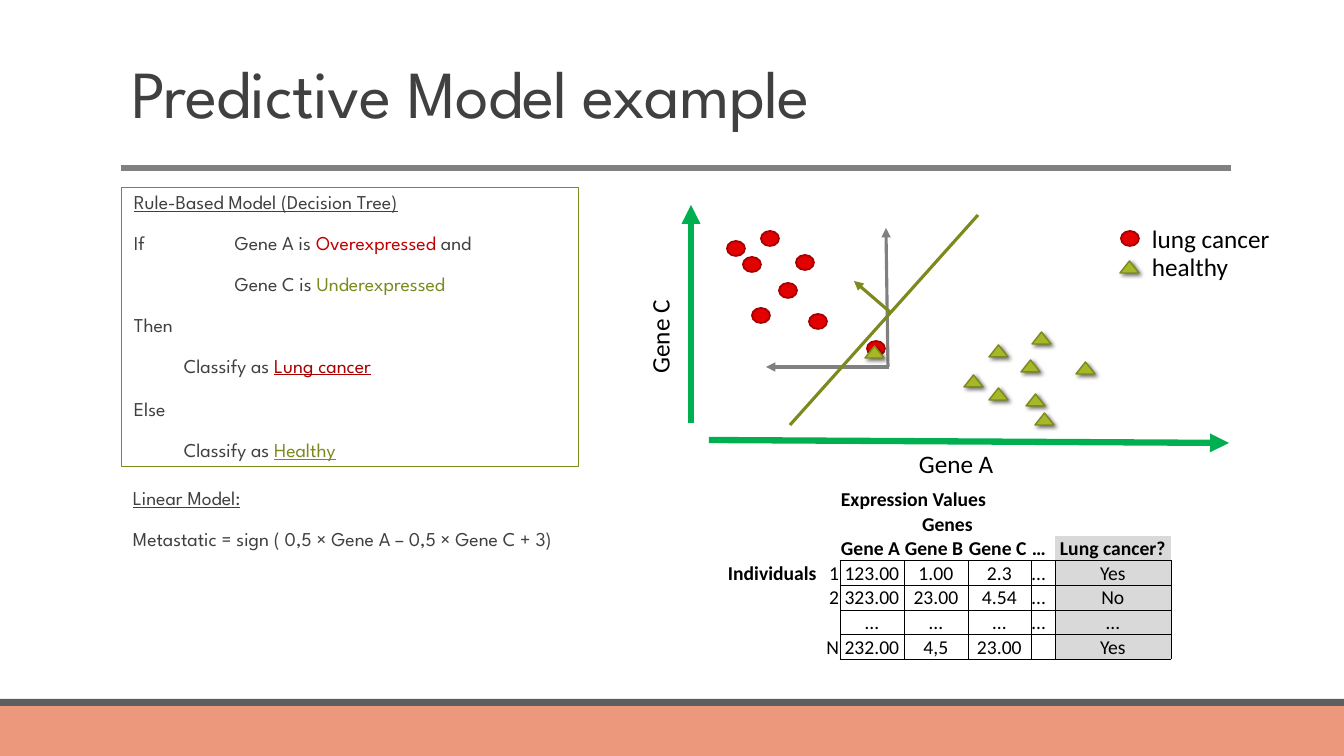
from lxml import etree
from pptx import Presentation, util as u
from pptx.dml.color import RGBColor
from pptx.enum import shapes, text
from pptx.oxml import ns

COLORS = {
    "salmon": "EC987D", "charcoal": "5E5E5E", "gray": "808080", "ink": "404040",
    "black": "000000", "axis": "00B050", "olive": "7D891D", "lime": "A6B727",
    "red": "E20000", "dark red": "A70000", "over": "C00000", "cancer": "AA0000",
    "shade": "D9D9D9",
}
HEADING, BODY = "League Spartan", "Calibri"
TITLE = "Predictive Model example"

# Paragraph: (indent in px, space after in pt, [(words, colour, underlined)])
RULES = [
    (0, 2, [("Rule-Based Model (Decision Tree)", "ink", True)]),
    (0, 2, [("If \tGene A is ", "ink", False), ("Overexpressed ", "over", False),
            ("and", "ink", False)]),
    (0, 2, [("\tGene C is ", "ink", False), ("Underexpressed", "olive", False)]),
    (0, 2, [("Then", "ink", False)]),
    (50, 4, [("Classify as ", "ink", False), ("Lung cancer", "cancer", True)]),
    (0, 2, [("Else", "ink", False)]),
    (50, 4, [("Classify as ", "ink", False), ("Healthy", "olive", True)]),
]
LINEAR = [
    (0, 2, [("Linear Model:", "ink", True)]),
    (0, 2, [("Metastatic = sign ( 0,5 × Gene A – 0,5 × Gene C + 3)", "ink", False)]),
]
TABLE_ROWS = [
    ["", "", "Expression Values", "", "", "", ""],
    ["", "", "Genes", "", "", "", ""],
    ["", "", "Gene A", "Gene B", "Gene C", "…", "Lung cancer?"],
    ["Individuals", "1", "123.00", "1.00", "2.3", "…", "Yes"],
    ["", "2", "323.00", "23.00", "4.54", "…", "No"],
    ["", "", "…", "…", "…", "…", "…"],
    ["", "N", "232.00", "4,5", "23.00", "", "Yes"],
]
COLUMN_WIDTHS = [95, 18, 64, 64, 63, 24, 116]
ROW_HEIGHT = 24
HEADER_ROW, FIRST_GENE, ELLIPSIS, OUTCOME = 2, 2, 5, 6

# Start, end, colour, width in pt, arrowhead
RULE_LINE = ((121, 168), (1231, 168), "gray", 4.25, False)
AXES = [
    ((691, 423), (691, 205), "axis", 4.5, True),
    ((709, 440), (1229, 443), "axis", 4.5, True),
]
BOUNDARIES = [
    ((888, 367), (886, 228), "gray", 2.25, True),
    ((889, 367), (766, 367), "gray", 2.25, True),
    ((790, 425), (978, 215), "olive", 2.25, False),
    ((890, 312), (854, 281), "olive", 2.25, True),
]
LABELS = [
    ("Gene C", (612, 316, 95, 40), 270, False),
    ("Gene A", (909, 443, 96, 40), 0, False),
    ("lung cancer", (1142, 218, 149, 40), 0, True),
    ("healthy", (1142, 246, 190, 40), 0, True),
]
CANCER_POINTS = [(727, 241), (743, 257), (761, 231), (752, 308), (779, 283),
                 (796, 255), (809, 314), (1121, 231)]
HEALTHY_POINTS = [(989, 388), (1021, 360), (1035, 413), (1026, 394), (989, 345),
                  (1076, 362), (1032, 332), (964, 375), (1120, 261)]
NEW_CANCER, NEW_HEALTHY = (867, 341), (865, 346)


def px(*lengths):
    return [round(length * 914400 / 100.8) for length in lengths]


def color(name):
    return RGBColor.from_string(COLORS[name])


def assign(target, **formats):
    for name, value in formats.items():
        setattr(target, name, value)


def add_xml(parent, tag, **attributes):
    return etree.SubElement(parent, ns.qn(tag), attributes)


def add_span(para, words, size, font, shade, **formats):
    span = para.add_run()
    span.text = words
    assign(span.font, size=u.Pt(size), name=font, **formats)
    span.font.color.rgb = color(shade)
    return span


def add_shape(slide, kind, bounds, fill, line=None, width=0):
    shape = slide.shapes.add_shape(kind, *px(*bounds))
    shape.shadow.inherit = False
    shape.fill.solid()
    shape.fill.fore_color.rgb = color(fill)
    if line:
        shape.line.color.rgb = color(line)
        shape.line.width = u.Pt(width)
    else:
        shape.line.fill.background()
    return shape


def add_line(slide, start, end, shade, width, arrow):
    line = slide.shapes.add_connector(shapes.MSO_CONNECTOR.STRAIGHT, *px(*start, *end))
    line.line.color.rgb = color(shade)
    line.line.width = u.Pt(width)
    if arrow:
        add_xml(line.line._get_or_add_ln(), "a:tailEnd", type="triangle")
    add_xml(line._element.spPr, "a:effectLst")


def add_model(slide, bounds, paragraphs):
    box = slide.shapes.add_textbox(*px(*bounds))
    side, edge = px(12, 5)
    assign(box.text_frame, word_wrap=True, margin_left=side, margin_right=side,
           margin_top=edge, margin_bottom=edge)
    for index, (indent, after, spans) in enumerate(paragraphs):
        para = box.text_frame.add_paragraph() if index else box.text_frame.paragraphs[0]
        assign(para, line_spacing=0.9, space_before=u.Pt(12), space_after=u.Pt(after))
        properties = para._p.get_or_add_pPr()
        properties.set("marL", str(px(indent)[0]))
        stops = add_xml(properties, "a:tabLst")
        add_xml(stops, "a:tab", pos=str(u.Inches(1)), algn="l")
        for words, shade, underline in spans:
            add_span(para, words, 14, HEADING, shade, underline=underline)
    return box


def add_label(slide, words, bounds, rotation, wrap):
    box = slide.shapes.add_textbox(*px(*bounds))
    box.rotation = rotation
    box.text_frame.word_wrap = wrap
    add_span(box.text_frame.paragraphs[0], words, 18, BODY, "black")


def add_cancer(slide, point):
    add_shape(slide, shapes.MSO_SHAPE.OVAL, (*point, 18, 15), "red", "dark red", 1.25)


def add_healthy(slide, point):
    marker = add_shape(slide, shapes.MSO_SHAPE.ISOSCELES_TRIANGLE, (*point, 19, 12),
                       "lime", "olive", 1)
    effects = marker._element.spPr.find(ns.qn("a:effectLst"))
    shadow = add_xml(effects, "a:outerShdw", blurRad=str(u.Pt(3)), dist=str(u.Pt(2)),
                     dir=str(45 * 60000), algn="tl", rotWithShape="0")
    add_xml(add_xml(shadow, "a:srgbClr", val=COLORS["black"]), "a:alpha", val="60000")


def add_borders(cell, sides):
    for side in sides:
        line = add_xml(cell._tc.get_or_add_tcPr(), f"a:ln{side}", w=str(u.Pt(0.5)))
        add_xml(add_xml(line, "a:solidFill"), "a:srgbClr", val=COLORS["black"])


def cell_alignment(row, column):
    if row > HEADER_ROW and column == 1:
        return text.PP_ALIGN.RIGHT
    centred = row == 1 or column == OUTCOME or (
        row > HEADER_ROW and FIRST_GENE <= column < ELLIPSIS)
    return text.PP_ALIGN.CENTER if centred else text.PP_ALIGN.LEFT


def format_cell(cell, words, row, column):
    in_grid = column >= FIRST_GENE
    pad = px(1)[0]
    assign(cell, margin_left=pad, margin_right=pad, margin_top=pad, margin_bottom=0,
           vertical_anchor=text.MSO_ANCHOR.BOTTOM)
    if in_grid and row >= HEADER_ROW:
        add_borders(cell, "LRTB" if row > HEADER_ROW else "B")
    elif column == FIRST_GENE - 1 and row > HEADER_ROW:
        add_borders(cell, "R")
    if column == OUTCOME and row >= HEADER_ROW:
        cell.fill.solid()
        cell.fill.fore_color.rgb = color("shade")
    else:
        cell.fill.background()
    para = cell.text_frame.paragraphs[0]
    para.alignment = cell_alignment(row, column)
    if words:
        add_span(para, words, 14, BODY, "black", bold=row <= HEADER_ROW or column == 0)
    else:
        add_xml(para._p, "a:endParaRPr", sz="1400")


def add_expression_table(slide):
    frame = slide.shapes.add_table(
        len(TABLE_ROWS), len(COLUMN_WIDTHS),
        *px(727, 487, sum(COLUMN_WIDTHS), ROW_HEIGHT * len(TABLE_ROWS)))
    table = frame.table
    assign(table, first_row=False, horz_banding=False)
    style = table._tbl.tblPr.find(ns.qn("a:tableStyleId"))
    style.text = "{2D5ABB26-0587-4C30-8999-92F81FD0307C}"
    for column, width in zip(table.columns, px(*COLUMN_WIDTHS)):
        column.width = width
    for row, values in enumerate(TABLE_ROWS):
        table.rows[row].height = px(ROW_HEIGHT)[0]
        for column, words in enumerate(values):
            format_cell(table.cell(row, column), words, row, column)
    table.cell(0, FIRST_GENE).merge(table.cell(0, OUTCOME))
    table.cell(1, FIRST_GENE).merge(table.cell(1, ELLIPSIS))


def add_title(slide):
    title = slide.shapes.title
    left, top, width, height = px(121, 31, 1109, 133)
    assign(title, left=left, top=top, width=width, height=height)
    assign(title.text_frame, word_wrap=True, auto_size=text.MSO_AUTO_SIZE.NONE,
           vertical_anchor=text.MSO_ANCHOR.MIDDLE)
    para = title.text_frame.paragraphs[0]
    assign(para, alignment=text.PP_ALIGN.LEFT, line_spacing=0.85)
    span = add_span(para, TITLE, 48, HEADING, "ink")
    span.font._element.set("spc", "-50")


def main():
    deck = Presentation()
    deck.slide_width, deck.slide_height = px(1344, 756)
    slide = deck.slides.add_slide(deck.slide_layouts.get_by_name("Title Only"))
    add_shape(slide, shapes.MSO_SHAPE.RECTANGLE, (0, 706, 1344, 50), "salmon")
    add_shape(slide, shapes.MSO_SHAPE.RECTANGLE, (0, 699, 1344, 7), "charcoal")
    add_line(slide, *RULE_LINE)
    add_title(slide)
    rules = add_model(slide, (122, 188, 457, 279), RULES)
    rules.line.color.rgb = color("olive")
    rules.line.width = u.Pt(0.75)
    add_model(slide, (121, 484, 523, 82), LINEAR)
    add_expression_table(slide)
    for axis in AXES:
        add_line(slide, *axis)
    for label in LABELS:
        add_label(slide, *label)
    for point in CANCER_POINTS:
        add_cancer(slide, point)
    for point in HEALTHY_POINTS:
        add_healthy(slide, point)
    for boundary in BOUNDARIES:
        add_line(slide, *boundary)
    add_cancer(slide, NEW_CANCER)
    add_healthy(slide, NEW_HEALTHY)
    deck.save("out.pptx")


if __name__ == "__main__":
    main()
